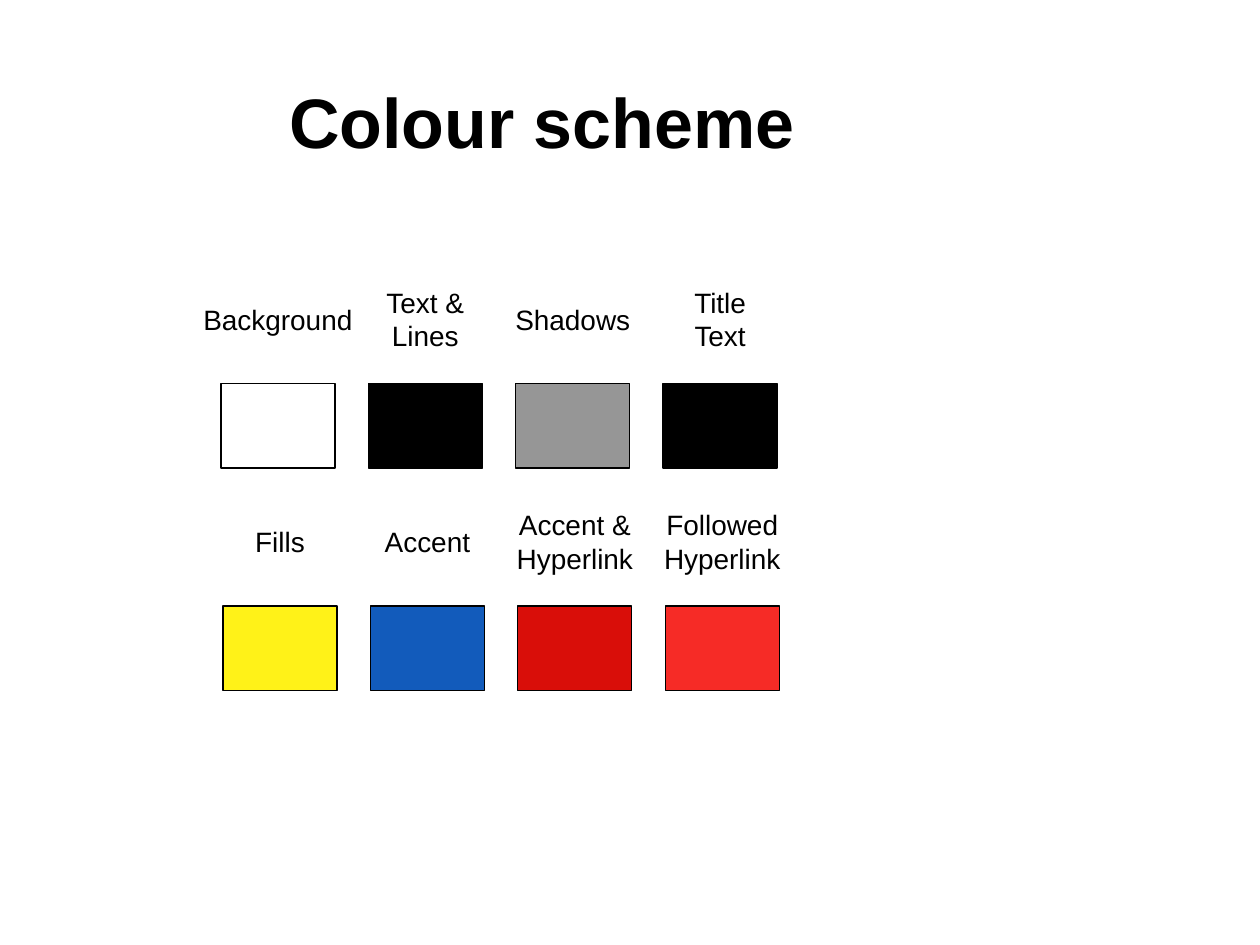
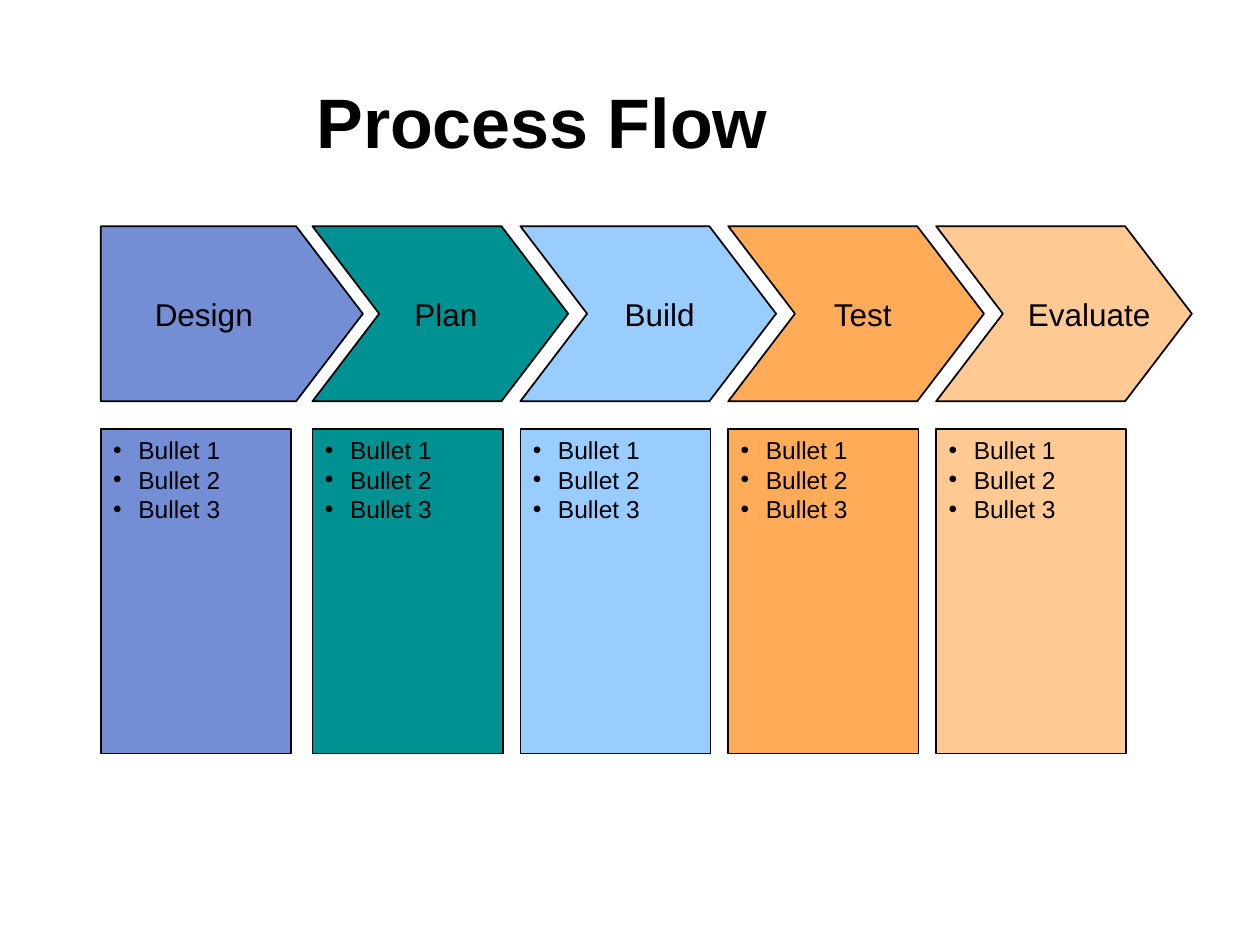
import pptx
import pptx.util
import pptx.dml.color
import pptx.enum.shapes
import pptx.enum.text
import pptx.oxml.ns
import lxml.etree

COLOURS = {
    "white": "FFFFFF", "black": "000000", "grey": "969696", "yellow": "FFF218",
    "blue": "125BBB", "red": "D90E09", "bright red": "F62B26",
    "periwinkle": "748ED6", "teal": "009193", "sky": "99CCFF",
    "orange": "FFAB57", "peach": "FFC993",
}
FONT = "Arial"
COLUMNS, ROWS = 100, 75
ALIGN = pptx.enum.text.PP_ALIGN
ANCHOR = pptx.enum.text.MSO_ANCHOR
AUTO = pptx.enum.text.MSO_AUTO_SIZE


def rgb(colour):
    """Return the named colour."""
    return pptx.dml.color.RGBColor.from_string(COLOURS[colour])


def add_bullet(paragraph, indent):
    """Give a paragraph a hanging round bullet."""
    properties = paragraph._p.get_or_add_pPr()
    properties.set("marL", str(indent))
    properties.set("indent", str(-indent))
    for tag, name, value in (("a:buFont", "typeface", FONT), ("a:buChar", "char", "•")):
        element = lxml.etree.SubElement(properties, pptx.oxml.ns.qn(tag))
        element.set(name, value)


def write(frame, paragraphs, size, align=ALIGN.LEFT, anchor=ANCHOR.TOP,
          bold=False, wrap=True, auto_size=AUTO.NONE, bullet_indent=None):
    """Fill a text frame with formatted paragraphs."""
    frame.word_wrap = wrap
    frame.auto_size = auto_size
    frame.vertical_anchor = anchor
    for index, wording in enumerate(paragraphs):
        paragraph = frame.add_paragraph() if index else frame.paragraphs[0]
        paragraph.text = wording
        paragraph.alignment = align
        if bullet_indent:
            add_bullet(paragraph, bullet_indent)
        paragraph.font.name = FONT
        paragraph.font.size = pptx.util.Pt(size)
        paragraph.font.bold = bold
        paragraph.font.color.rgb = rgb("black")


class Deck:
    """Holds the style and the current slide."""

    def __init__(self):
        """Start a deck of the right size."""
        self.show = pptx.Presentation()
        self.show.slide_width = pptx.util.Inches(10)
        self.show.slide_height = pptx.util.Inches(7.5)
        self.slide = None

    def x(self, columns):
        """Turn grid columns into a length."""
        return round(self.show.slide_width * columns / COLUMNS)

    def y(self, rows):
        """Turn grid rows into a length."""
        return round(self.show.slide_height * rows / ROWS)

    def place(self, left, top, width, height):
        """Turn a grid area into slide lengths."""
        return self.x(left), self.y(top), self.x(width), self.y(height)

    def start(self, heading):
        """Add a slide with its title."""
        self.slide = self.show.slides.add_slide(self.show.slide_layouts[5])
        title = self.slide.shapes.title
        title.left, title.top, title.width, title.height = self.place(5, 2.85, 76, 13.4)
        write(title.text_frame, [heading], 40, align=ALIGN.CENTER,
              anchor=ANCHOR.MIDDLE, bold=True)

    def paint(self, shape, colour, line_width):
        """Apply a flat fill and a black outline."""
        shape.shadow.inherit = False
        shape.fill.solid()
        shape.fill.fore_color.rgb = rgb(colour)
        shape.line.color.rgb = rgb("black")
        shape.line.width = pptx.util.Pt(line_width)

    def panel(self, area, colour, line_width):
        """Add a filled rectangle."""
        rectangle = pptx.enum.shapes.MSO_SHAPE.RECTANGLE
        panel = self.slide.shapes.add_shape(rectangle, *self.place(*area))
        self.paint(panel, colour, line_width)
        return panel

    def bullets(self, area, colour, points):
        """Add a panel with a bulleted list."""
        panel = self.panel(area, colour, 1)
        write(panel.text_frame, points, 14, bullet_indent=self.x(2))

    def outline(self, corners, colour):
        """Add a closed polygon."""
        points = [(self.x(column), self.y(row)) for column, row in corners]
        builder = self.slide.shapes.build_freeform(*points[0])
        builder.add_line_segments(points[1:], close=True)
        self.paint(builder.convert_to_shape(), colour, 1)

    def label(self, area, paragraphs, size, align=ALIGN.LEFT):
        """Add a text box that fits its text."""
        box = self.slide.shapes.add_textbox(*self.place(*area))
        write(box.text_frame, paragraphs, size, align=align, wrap=False,
              auto_size=AUTO.SHAPE_TO_FIT_TEXT)


def colour_scheme(deck):
    """Build the slide of named swatches."""
    deck.start("Colour scheme")
    swatch_rows = [
        (17.53, 30.45, 25.35, [
            (["Background"], 14, "white"), (["Text &", "Lines"], 8.5, "black"),
            (["Shadows"], 11.2, "grey"), (["Title\nText"], 6.4, "black")]),
        (17.7, 48.1, 43, [
            (["Fills"], 6.2, "yellow"), (["Accent"], 9, "blue"),
            (["Accent &", "Hyperlink"], 11.5, "red"),
            (["Followed", "Hyperlink"], 11.5, "bright red")]),
    ]
    pitch, width, height = 11.7, 9.05, 6.7
    for first, top, caption_middle, swatches in swatch_rows:
        for index, (caption, caption_width, colour) in enumerate(swatches):
            left = first + index * pitch
            deck.panel((left, top, width, height), colour, 0.75)
            line_count = len("\n".join(caption).splitlines())
            caption_height = 1 + 2.7 * line_count
            caption_left = left + (width - caption_width) / 2
            deck.label((caption_left, caption_middle - caption_height / 2,
                        caption_width, caption_height),
                       caption, 16, align=ALIGN.CENTER)


def process_flow(deck):
    """Build the slide of five stages."""
    deck.start("Process Flow")
    stages = [
        ("Design", 8, 11.3, 9.8, "periwinkle"), ("Plan", 24.8, 31.9, 7, "teal"),
        ("Build", 41.3, 48.6, 7.6, "sky"), ("Test", 57.8, 65.2, 6.9, "orange"),
        ("Evaluate", 74.3, 80.6, 11.7, "peach"),
    ]
    points = [f"Bullet {number}" for number in range(1, 4)]
    top, middle, bottom, point = 17.95, 24.9, 31.85, 5.3
    for name, left, name_left, name_width, colour in stages:
        deck.bullets((left, 34.05, 15.1, 25.75), colour, points)
    for index, (name, left, name_left, name_width, colour) in enumerate(stages):
        shoulder = left + (15 if index else 15.5)
        notch = [(left + point, middle)] if index else []
        deck.outline([(left, top), (shoulder, top), (shoulder + point, middle),
                      (shoulder, bottom), (left, bottom)] + notch, colour)
        deck.label((name_left, 22.9, name_width, 4), [name], 18)


def main():
    """Build and save the deck."""
    deck = Deck()
    colour_scheme(deck)
    process_flow(deck)
    deck.show.save("out.pptx")


if __name__ == "__main__":
    main()
